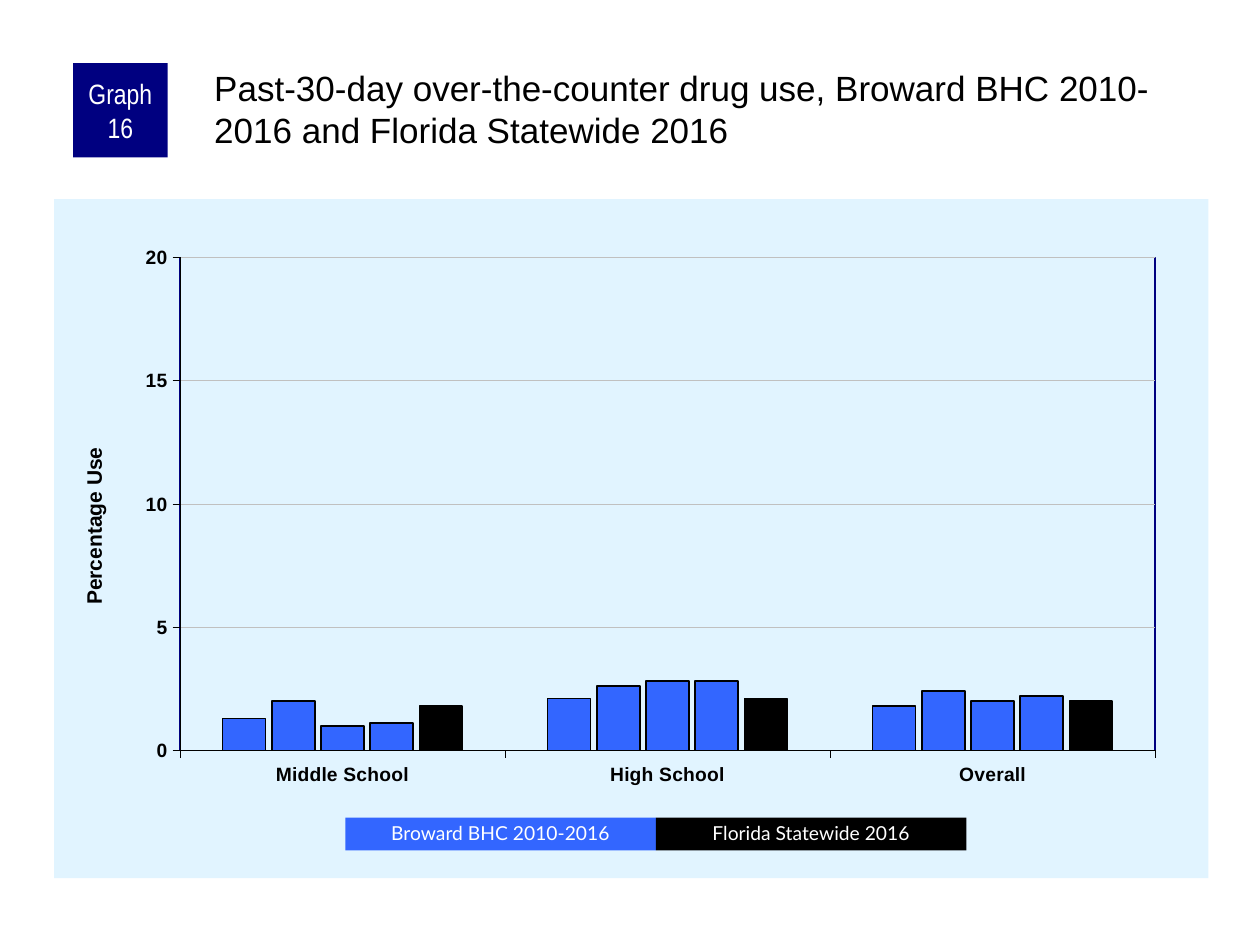
import pptx
import pptx.chart.data
import pptx.dml.color
import pptx.enum.chart
import pptx.enum.shapes
import pptx.enum.text
import pptx.oxml
import pptx.oxml.ns
import pptx.util

Inches = pptx.util.Inches
Pt = pptx.util.Pt
Align = pptx.enum.text.PP_ALIGN
Anchor = pptx.enum.text.MSO_ANCHOR
qn = pptx.oxml.ns.qn

COLORS = {"navy": "000080", "blue": "3366FF", "pale": "E1F4FF",
          "grid": "C0C0C0", "black": "000000", "white": "FFFFFF"}
SCHOOLS = ["Middle School", "High School", "Overall"]
USE = [
    ("Series 1", (1.3, 2.1, 1.8), "blue", 0.75),
    ("Series 2", (2, 2.6, 2.4), "blue", 1),
    ("Series 3", (1, 2.8, 2), "blue", 1),
    ("Series 4", (1.1, 2.8, 2.2), "blue", 1),
    ("Series 5", (1.8, 2.1, 2), "black", 1),
]


def color(name):
    return pptx.dml.color.RGBColor.from_string(COLORS[name])


def style(font, size, name="Arial", tint="black", bold=False):
    font.size = Pt(size)
    font.name = name
    font.bold = bold
    font.color.rgb = color(tint)


def write(frame, text, size, name="Arial", tint="black", bold=False,
          align=Align.LEFT, anchor=Anchor.MIDDLE, inset=(0.1, 0.05, 0.1, 0.05),
          space=1.0):
    frame.word_wrap = True
    frame.auto_size = pptx.enum.text.MSO_AUTO_SIZE.NONE
    frame.vertical_anchor = anchor
    (frame.margin_left, frame.margin_top,
     frame.margin_right, frame.margin_bottom) = map(Inches, inset)
    para = frame.paragraphs[0]
    para.alignment = align
    para.line_spacing = space
    run = para.add_run()
    run.text = text
    style(run.font, size, name, tint, bold)


def block(slide, box, fill, text, **form):
    shape = slide.shapes.add_shape(
        pptx.enum.shapes.MSO_SHAPE.RECTANGLE, *map(Inches, box))
    shape.shadow.inherit = False
    shape.fill.solid()
    shape.fill.fore_color.rgb = color(fill)
    shape.line.fill.background()
    write(shape.text_frame, text, tint="white", align=Align.CENTER, **form)


def header(slide, box):
    left, top, width, height = box
    block(slide, (left, top, 0.75, 0.75), "navy", "Graph 16", size=16,
          name="Arial Narrow", inset=(0.05, 0, 0.05, 0))
    title = slide.shapes.title
    title.left, title.top = Inches(left + 1.09), Inches(top)
    title.width, title.height = Inches(width - 1.09), Inches(height)
    write(title.text_frame,
          "Past-30-day over-the-counter drug use, Broward BHC 2010-2016 "
          "and Florida Statewide 2016",
          size=20, anchor=Anchor.TOP, inset=(0.03, 0.03, 0, 0))


def layout(x, y, w=None, h=None):
    target = '<c:layoutTarget val="inner"/>' if w else ""
    modes = '<c:xMode val="edge"/><c:yMode val="edge"/>'
    sides = "".join(f'<c:{key} val="{val}"/>' for key, val in
                    zip("xywh", (x, y, w, h)) if val is not None)
    return pptx.oxml.parse_xml(
        f'<c:layout {pptx.oxml.ns.nsdecls("c")}><c:manualLayout>'
        f'{target}{modes}{sides}</c:manualLayout></c:layout>')


def paint(fill, line):
    return pptx.oxml.parse_xml(
        f'<c:spPr {pptx.oxml.ns.nsdecls("c", "a")}>{fill}'
        f'<a:ln w="{Pt(1)}">{line}</a:ln></c:spPr>')


def solid(name):
    return f'<a:solidFill><a:srgbClr val="{COLORS[name]}"/></a:solidFill>'


def drop(node, tag):
    for child in node.findall(qn(tag)):
        node.remove(child)


def axes(chart):
    for axis in (chart.category_axis, chart.value_axis):
        axis.major_tick_mark = pptx.enum.chart.XL_TICK_MARK.OUTSIDE
        axis.minor_tick_mark = pptx.enum.chart.XL_TICK_MARK.NONE
        style(axis.tick_labels.font, 11, bold=True)
        axis.format.line.color.rgb = color("black")
        axis.format.line.width = Pt(0.25)
    axis = chart.value_axis
    axis.minimum_scale, axis.maximum_scale, axis.major_unit = 0, 20, 5
    axis.tick_labels.number_format = "0"
    axis.tick_labels.number_format_is_linked = False
    grid = axis.major_gridlines.format.line
    grid.color.rgb = color("grid")
    grid.width = Pt(0.25)
    run = axis.axis_title.text_frame.paragraphs[0].add_run()
    run.text = "Percentage Use"
    style(run.font, 12, bold=True)
    node = axis.axis_title._element
    drop(node, "c:layout")
    node.find(qn("c:tx")).addnext(layout(0.02, 0.36))


def graph(slide, box):
    data = pptx.chart.data.CategoryChartData()
    data.categories = SCHOOLS
    for name, vals, _, _ in USE:
        data.add_series(name, vals)
    kind = pptx.enum.chart.XL_CHART_TYPE.COLUMN_CLUSTERED
    chart = slide.shapes.add_chart(kind, *map(Inches, box), data).chart
    chart.has_title = chart.has_legend = False
    style(chart.font, 8)
    axes(chart)
    plot = chart.plots[0]
    plot.gap_width, plot.overlap = 200, -15
    plot.vary_by_categories = False
    for bars, (_, _, tint, width) in zip(plot.series, USE):
        bars.format.fill.solid()
        bars.format.fill.fore_color.rgb = color(tint)
        bars.format.line.color.rgb = color("black")
        bars.format.line.width = Pt(width)
    root = chart.element.find(qn("c:chart"))
    root.addnext(paint(solid("pale"), "<a:noFill/>"))
    area = root.find(qn("c:plotArea"))
    drop(area, "c:layout")
    area.insert(0, layout(0.109, 0.086, 0.845, 0.726))
    area.append(paint("<a:noFill/>", solid("navy")))


def legend(slide, box):
    left, top, width, height = box
    keys = [("blue", "Broward BHC 2010-2016"), ("black", "Florida Statewide 2016")]
    step = width / len(keys)
    for i, (fill, text) in enumerate(keys):
        block(slide, (left + i * step, top, step, height), fill, text,
              size=11, name="Lato", space=0.9)


def main():
    deck = pptx.Presentation()
    deck.slide_width, deck.slide_height = Inches(10), Inches(7.5)
    slide = deck.slides.add_slide(deck.slide_layouts[5])
    graph(slide, (0.43, 1.58, 9.16, 5.39))
    header(slide, (0.58, 0.5, 9.01, 0.83))
    legend(slide, (2.74, 6.49, 4.93, 0.26))
    deck.save("out.pptx")


if __name__ == "__main__":
    main()
